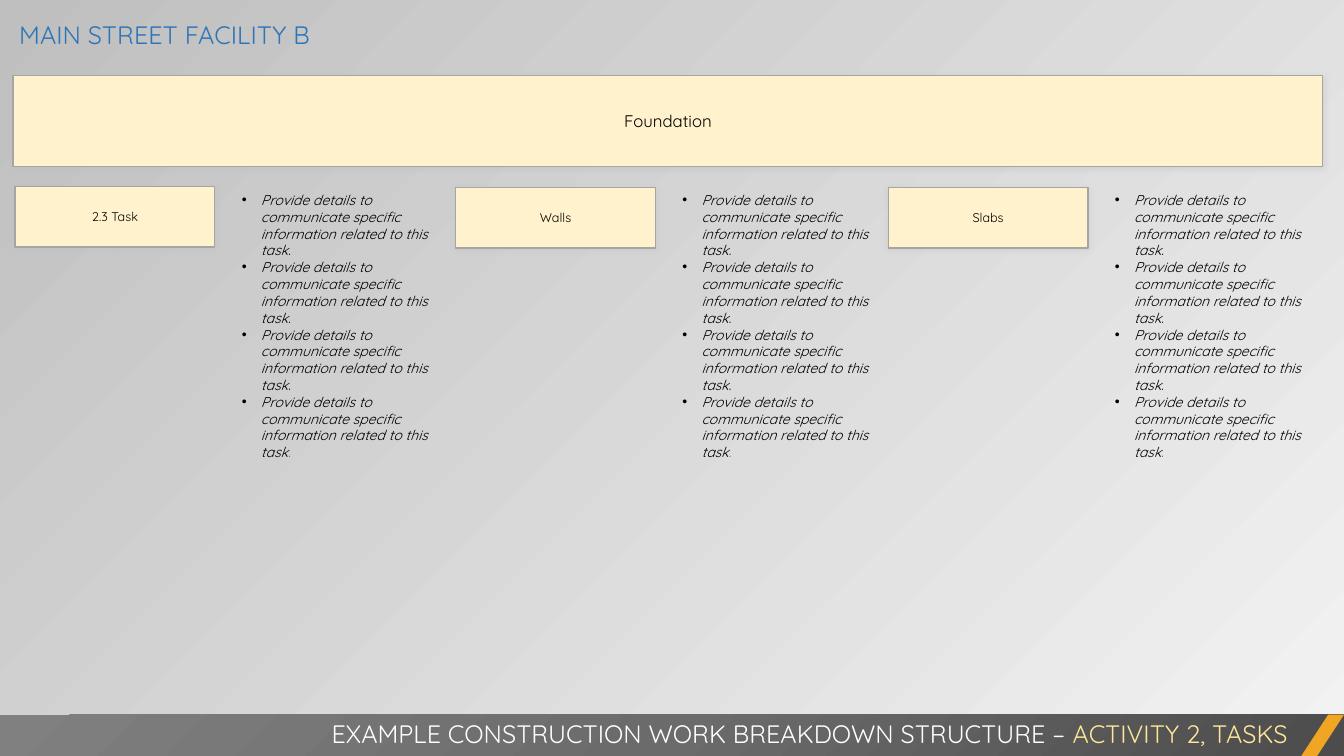
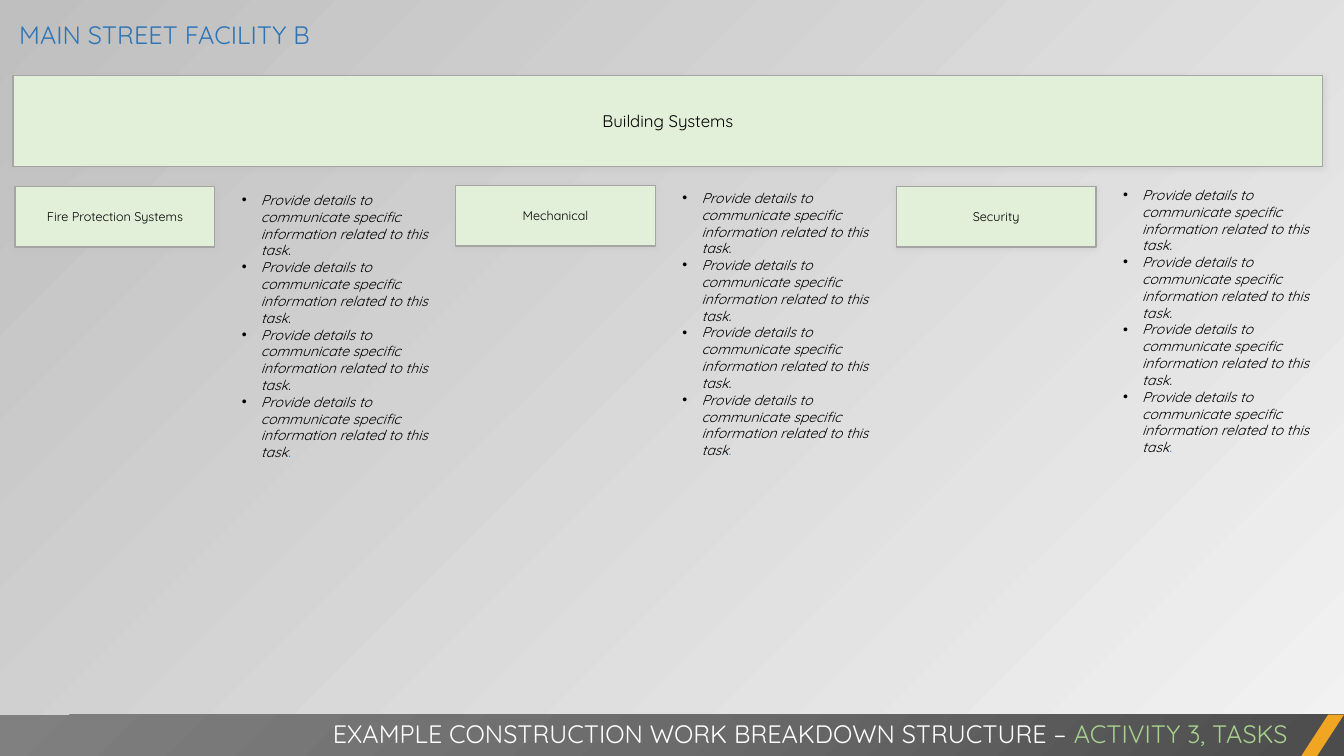
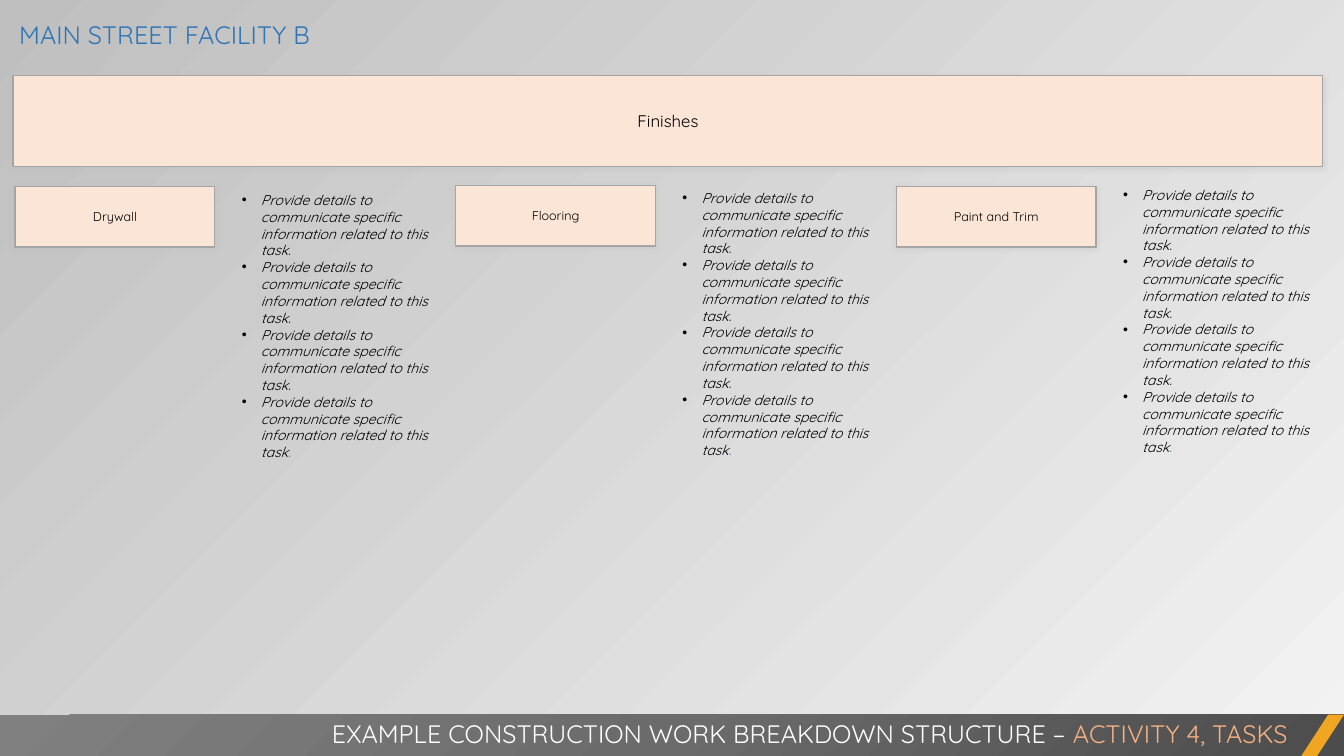
from lxml import etree
from pptx import Presentation, util as u
from pptx.dml.color import RGBColor
from pptx.enum import shapes, text
from pptx.oxml import parse_xml
from pptx.oxml.ns import nsdecls, qn

PX = 9144  # 100 px to the inch
FONT = "Quicksand"
COLOURS = {
    "title": "2E75B6", "ink": "000000", "white": "FFFFFF",
    "outline": "A5A5A5", "shadow": "BFBFBF", "accent": "F0A622",
}
BACKGROUND = f"""<p:bg {nsdecls('p', 'a')}><p:bgPr><a:gradFill rotWithShape="1"><a:gsLst>
<a:gs pos="0"><a:srgbClr val="F2F2F2"><a:alpha val="40000"/></a:srgbClr></a:gs>
<a:gs pos="100000"><a:srgbClr val="BFBFBF"/></a:gs>
</a:gsLst><a:lin ang="13500000" scaled="0"/></a:gradFill><a:effectLst/></p:bgPr></p:bg>"""
BAND_FILL = f"""<a:gradFill {nsdecls('a')} rotWithShape="1"><a:gsLst>
<a:gs pos="0"><a:srgbClr val="4C4C4C"/></a:gs>
<a:gs pos="50000"><a:srgbClr val="6B6B6B"/></a:gs>
<a:gs pos="100000"><a:srgbClr val="808080"/></a:gs>
</a:gsLst><a:path path="circle"><a:fillToRect l="100000" t="100000"/></a:path></a:gradFill>"""
SHADOW = f"""<a:outerShdw {nsdecls('a')} blurRad="50800" dist="12700" dir="5400000"
algn="t" rotWithShape="0"><a:srgbClr val="{COLOURS['shadow']}"><a:alpha val="40000"/>
</a:srgbClr></a:outerShdw>"""

DETAIL = "Provide details to communicate specific information related to this task"
DETAILS = [[(DETAIL + ".", COLOURS["ink"])]] * 3 + [
    [(DETAIL, COLOURS["ink"]), (".", COLOURS["title"])]
]
BOX_WIDTH, BOX_HEIGHT = 198, 60
DETAILS_OFFSET = 215

# Each task: name, left, top of its box, top of its details
ACTIVITIES = [
    ("Foundation", "ACTIVITY 2, TASKS", "FFF2CC", "FFE699", [
        ("2.3 Task", 15, 185, 185), ("Walls", 452, 186, 185), ("Slabs", 881, 186, 185)]),
    ("Building Systems", "ACTIVITY 3, TASKS", "E2F0D9", "A9D18E", [
        ("Fire Protection Systems", 15, 185, 185), ("Mechanical", 452, 184, 183),
        ("Security", 889, 185, 180)]),
    ("Finishes", "ACTIVITY 4, TASKS", "FBE5D6", "F4B183", [
        ("Drywall", 15, 185, 185), ("Flooring", 452, 184, 183),
        ("Paint and Trim", 889, 185, 180)]),
]


def write(shape, paragraphs, size=18, align="LEFT", anchor="TOP", fit="NONE",
          italic=False, bullet=False):
    """Fill a shape with paragraphs, each a list of (text, colour) spans."""
    frame = shape.text_frame
    frame.word_wrap = True
    frame.auto_size = getattr(text.MSO_AUTO_SIZE, fit)
    frame.vertical_anchor = getattr(text.MSO_ANCHOR, anchor)
    for number, spans in enumerate(paragraphs):
        para = frame.add_paragraph() if number else frame.paragraphs[0]
        para.alignment = getattr(text.PP_ALIGN, align)
        if bullet:
            props = para._p.get_or_add_pPr()
            props.set("marL", str(19 * PX))
            props.set("indent", str(-19 * PX))
            etree.SubElement(props, qn("a:buFont"), typeface="Arial")
            etree.SubElement(props, qn("a:buChar"), char="•")
        for words, colour in spans:
            span = para.add_run()
            span.text = words
            span.font.name = FONT
            span.font.size = u.Pt(size)
            span.font.italic = italic
            span.font.color.rgb = RGBColor.from_string(colour)


def add_block(page, kind, bounds, fill=None, outlined=False):
    """Add a preset shape; an outlined one also gets the soft shadow."""
    block = page.shapes.add_shape(
        getattr(shapes.MSO_SHAPE, kind), *(value * PX for value in bounds))
    block.shadow.inherit = False
    if fill:
        block.fill.solid()
        block.fill.fore_color.rgb = RGBColor.from_string(fill)
    if outlined:
        block.line.color.rgb = RGBColor.from_string(COLOURS["outline"])
        block.line.width = u.Pt(1)
        block._element.spPr.find(qn("a:effectLst")).append(parse_xml(SHADOW))
    else:
        block.line.fill.background()
    return block


deck = Presentation()
deck.slide_width, deck.slide_height = u.Inches(13.33), u.Inches(7.5)
master_content = deck.slide_master._element.cSld
old_background = master_content.find(qn("p:bg"))
if old_background is not None:
    master_content.remove(old_background)
master_content.insert(0, parse_xml(BACKGROUND))
title_only = deck.slide_layouts[5]

for activity, label, fill, label_colour, tasks in ACTIVITIES:
    page = deck.slides.add_slide(title_only)
    title = page.shapes.title
    title.left, title.top, title.width, title.height = (
        value * PX for value in (9, 14, 1011, 40))
    write(title, [[("MAIN STREET FACILITY B", COLOURS["title"])]])

    header = add_block(page, "RECTANGLE", (13, 75, 1299, 90), fill, outlined=True)
    write(header, [[(activity, COLOURS["ink"])]], size=12, align="CENTER", anchor="MIDDLE")

    band = add_block(page, "RECTANGLE", (0, 709, 1333, 42))
    band._element.spPr.find(qn("a:prstGeom")).addnext(parse_xml(BAND_FILL))
    slash = add_block(page, "PARALLELOGRAM", (1290, 709, 43, 42), COLOURS["accent"])
    slash.adjustments[0] = 0.65
    footer = page.shapes.add_textbox(50 * PX, 708 * PX, 1237 * PX, 40 * PX)
    write(footer, [[("EXAMPLE CONSTRUCTION WORK BREAKDOWN STRUCTURE – ", COLOURS["white"]),
                    (label, label_colour)]], align="RIGHT", fit="SHAPE_TO_FIT_TEXT")

    for name, left, top, details_top in tasks:
        box = add_block(page, "RECTANGLE", (left, top, BOX_WIDTH, BOX_HEIGHT),
                        fill, outlined=True)
        write(box, [[(name, COLOURS["ink"])]], size=9, align="CENTER", anchor="MIDDLE")
        details = page.shapes.add_textbox(
            (left + DETAILS_OFFSET) * PX, details_top * PX, 206 * PX, 300 * PX)
        write(details, DETAILS, size=10, fit="SHAPE_TO_FIT_TEXT", italic=True, bullet=True)

deck.save("out.pptx")
